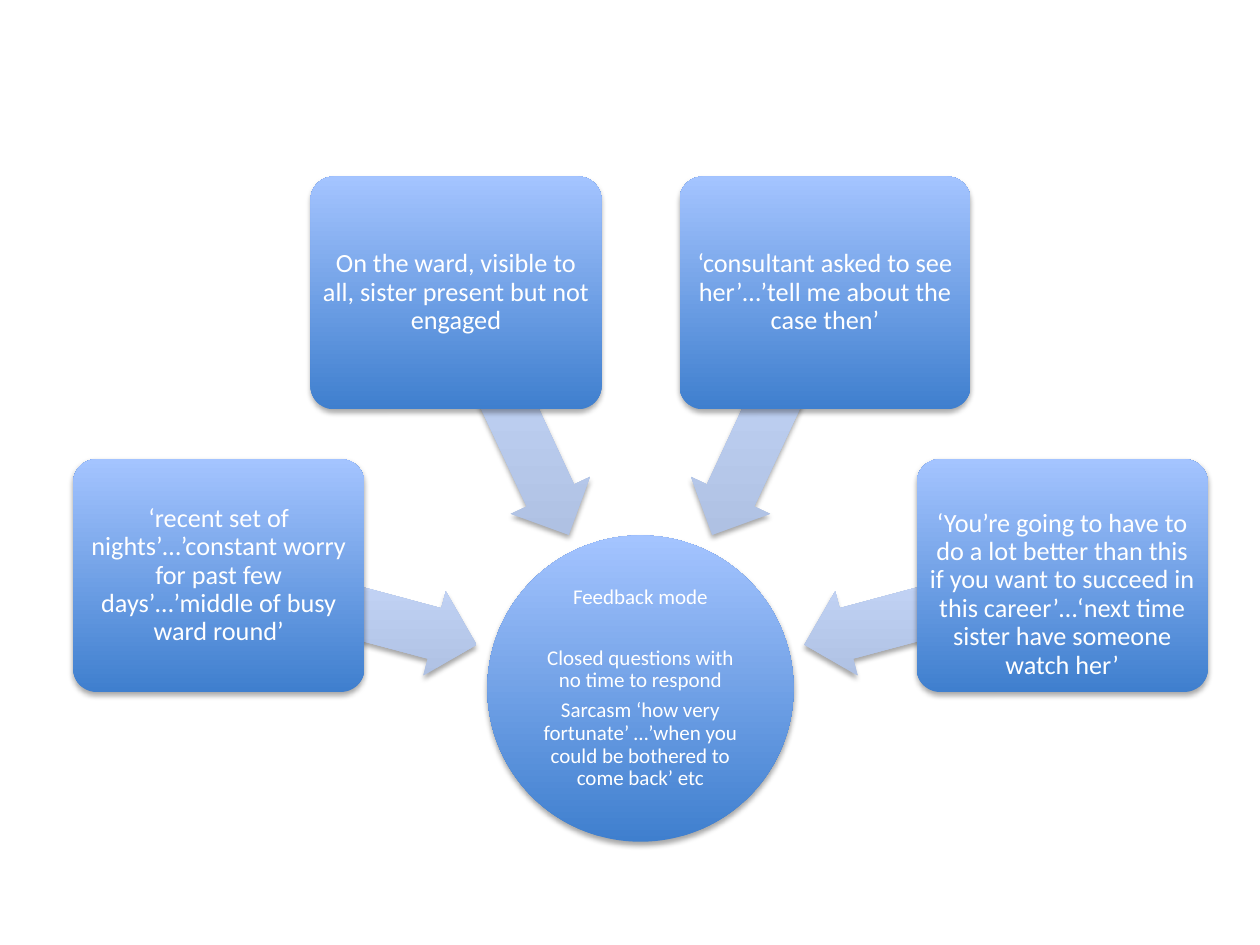
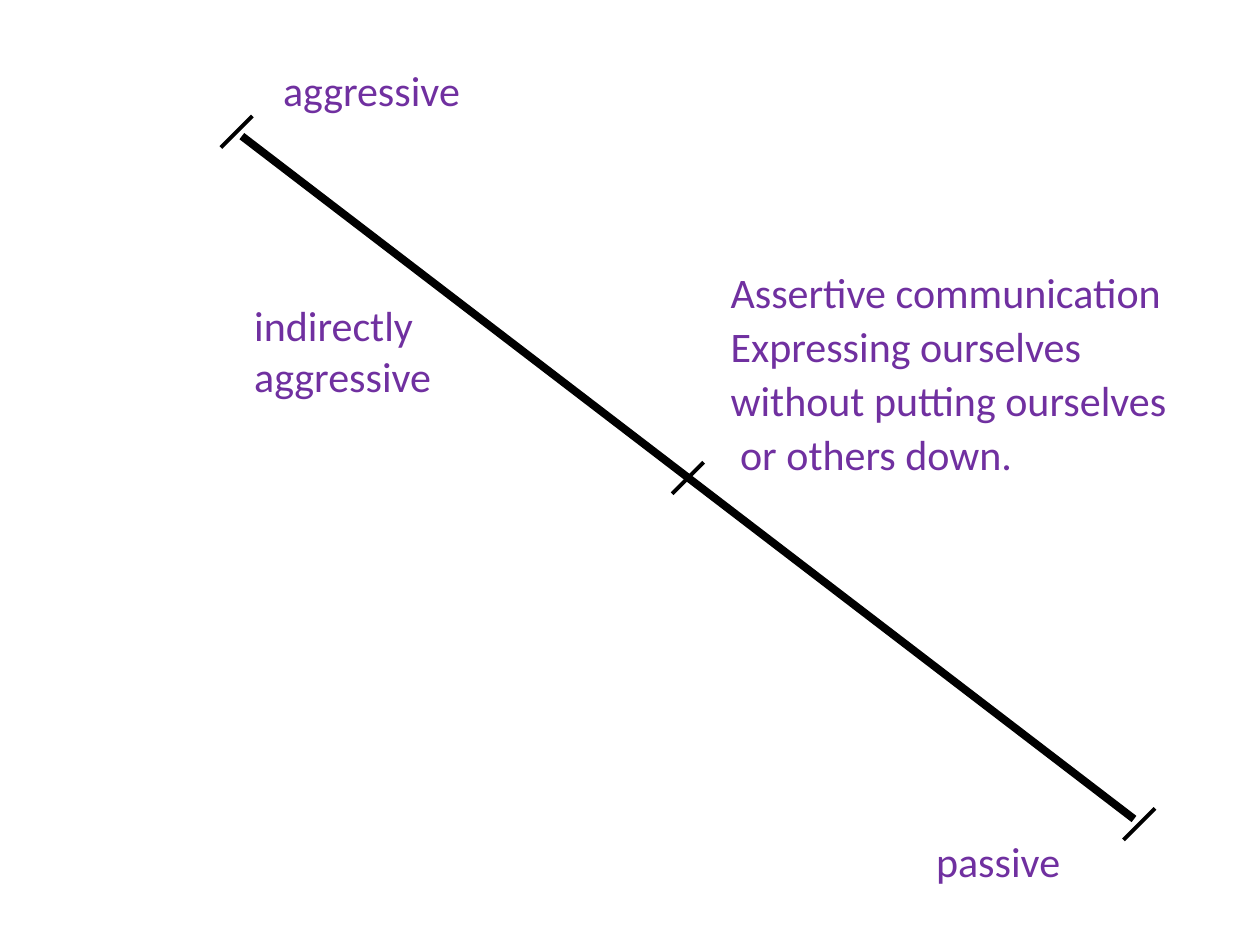
import math

import lxml.etree
import pptx
import pptx.dml.color
import pptx.enum.shapes
import pptx.enum.text
import pptx.oxml.ns
import pptx.util

Pt = pptx.util.Pt
qn = pptx.oxml.ns.qn
PRESET = pptx.enum.shapes.MSO_SHAPE
ANCHOR = pptx.enum.text.MSO_ANCHOR
ALIGN = pptx.enum.text.PP_ALIGN

FONT = "Calibri"
COLORS = {
    "deep": "3F7FCE",
    "light": "A4C4FF",
    "arrow_deep": "ADBFE1",
    "arrow_light": "CCDDFF",
    "on_blue": "FFFFFF",
    "label": "7030A0",
    "line": "000000",
}

HUB_SIZE = 175
CARD_SIZE = (166.3, 133)
ARROW_SIZE = (152.6, 49.8)
CARD_RADIUS = 249.5
ARROW_RADIUS = 173.25
FIRST_ANGLE, ANGLE_STEP = 195, 50

HUB_TEXT = [
    "Feedback mode",
    "Closed questions with no time to respond",
    "Sarcasm ‘how very fortunate’ …’when you could be bothered to come back’ etc",
]
CARDS = [
    ("‘recent set of nights’…’constant worry for past few days’…’middle of busy ward round’", 0),
    ("On the ward, visible to all, sister present but not engaged", 0),
    ("‘consultant asked to see her’…’tell me about the case then’", 0),
    ("‘You’re going to have to do a lot better than this if you want to succeed in this career’"
     "…‘next time sister have someone watch her’", 21.7),
]


def rgb(color):
    return pptx.dml.color.RGBColor.from_string(COLORS[color])


def write(frame, lines, size, color, align, spacing=1.0, gap=0):
    frame.word_wrap = True
    frame.text = "\n".join(lines)
    for index, paragraph in enumerate(frame.paragraphs):
        paragraph.alignment = align
        paragraph.line_spacing = spacing
        if index:
            paragraph.space_before = Pt(gap)
        for run in paragraph.runs:
            run.font.name = FONT
            run.font.size = Pt(size)
            run.font.color.rgb = rgb(color)


def set_insets(frame, inset, extra_top=0):
    frame.margin_left = frame.margin_right = frame.margin_bottom = Pt(inset)
    frame.margin_top = Pt(inset + extra_top)
    frame.vertical_anchor = ANCHOR.MIDDLE


def add_glossy(slide, preset, center, size, deep, light, adjustments=()):
    (x, y), (width, height) = center, size
    shape = slide.shapes.add_shape(
        preset, Pt(x - width / 2), Pt(y - height / 2), Pt(width), Pt(height))
    for index, value in enumerate(adjustments):
        shape.adjustments[index] = value
    shape.fill.gradient()
    shape.fill.gradient_angle = 90
    for stop, color in zip(shape.fill.gradient_stops, (deep, light)):
        stop.color.rgb = rgb(color)
    shape.line.fill.background()
    shape.shadow.inherit = False
    properties = shape._element.spPr
    properties.find(qn("a:gradFill")).set("rotWithShape", "0")
    shadow = lxml.etree.SubElement(
        properties.find(qn("a:effectLst")), qn("a:outerShdw"),
        blurRad=str(Pt(3.1)), dist=str(Pt(1.8)), dir="5400000", rotWithShape="0")
    black = lxml.etree.SubElement(shadow, qn("a:srgbClr"), val=COLORS["line"])
    lxml.etree.SubElement(black, qn("a:alpha"), val="35000")
    return shape


def around(center, radius, angle):
    turn = math.radians(angle)
    return center[0] + radius * math.cos(turn), center[1] + radius * math.sin(turn)


def add_hub(slide, center):
    hub = add_glossy(slide, PRESET.OVAL, center, (HUB_SIZE, HUB_SIZE), "deep", "light")
    set_insets(hub.text_frame, 1)
    write(hub.text_frame, HUB_TEXT, 12, "on_blue", ALIGN.CENTER, 0.9, 4.2)
    hub.text_frame.paragraphs[1].space_before = Pt(21.4)


def add_spoke(slide, center, angle, words, extra_top):
    arrow = add_glossy(slide, PRESET.LEFT_ARROW, around(center, ARROW_RADIUS, angle),
                       ARROW_SIZE, "arrow_deep", "arrow_light", (0.6, 0.5))
    arrow.rotation = angle
    card = add_glossy(slide, PRESET.ROUNDED_RECTANGLE, around(center, CARD_RADIUS, angle),
                      CARD_SIZE, "deep", "light", (0.1,))
    set_insets(card.text_frame, 2.1, extra_top)
    write(card.text_frame, [words], 15, "on_blue", ALIGN.CENTER, 0.9)


def feedback_slide(slide, center):
    add_hub(slide, center)
    for index, (words, extra_top) in enumerate(CARDS):
        add_spoke(slide, center, FIRST_ANGLE + index * ANGLE_STEP, words, extra_top)


def add_line(slide, start, end, weight):
    line = slide.shapes.add_connector(
        pptx.enum.shapes.MSO_CONNECTOR.STRAIGHT, *(Pt(value) for value in (*start, *end)))
    line.line.color.rgb = rgb("line")
    line.line.width = Pt(weight)
    lxml.etree.SubElement(line._element.spPr, qn("a:effectLst"))


def add_label(slide, box, lines, spacing=1.0, gap=0, top_inset=3.6):
    label = slide.shapes.add_textbox(*(Pt(value) for value in box))
    label.text_frame.margin_top = Pt(top_inset)
    write(label.text_frame, lines, 24, "label", ALIGN.LEFT, spacing, gap)


def add_scale(slide, box):
    left, top, width, height = box
    add_line(slide, (left, top), (left + width, top + height), 4.5)
    reach = 9
    for share in (0, 0.5, 1):
        x = left - 3 + share * (width + 6)
        y = top - 2.5 + share * (height + 5.5)
        add_line(slide, (x + reach, y - reach), (x - reach, y + reach), 2.25)


def spectrum_slide(slide, box):
    left, top, width, height = box
    add_scale(slide, box)
    add_label(slide, (left + 16.5, top - 44.7, 132.5, 36.7), ["aggressive"])
    add_label(slide, (left + width - 120.2, top + height + 5.8, 120.2, 36), ["passive"])
    add_label(slide, (left, top + 90, 137.5, 65.5), ["indirectly", "aggressive"])
    add_label(slide, (left + 272.2, top + 46, 284.4, 186.5), [
        "Assertive communication",
        "Expressing ourselves",
        "without putting ourselves",
        " or others down.",
    ], 0.9, 4.8, 32)


def main():
    deck = pptx.Presentation()
    deck.slide_width, deck.slide_height = Pt(720), Pt(540)
    blank = deck.slide_layouts[6]
    feedback_slide(deck.slides.add_slide(blank), (366, 393.5))
    spectrum_slide(deck.slides.add_slide(blank), (138.2, 77.8, 509.8, 390.2))
    deck.save("out.pptx")


if __name__ == "__main__":
    main()
